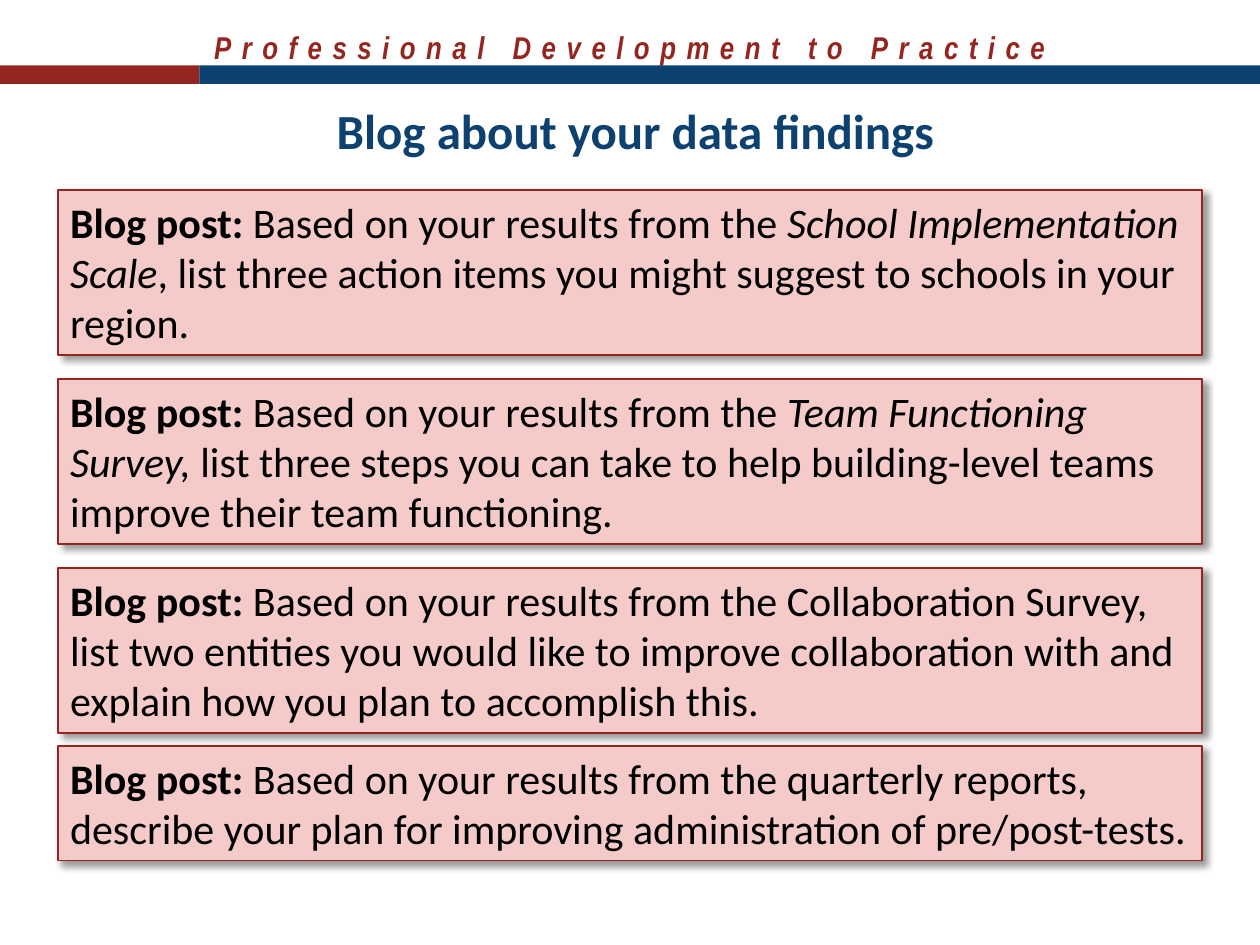
from lxml import etree
from pptx import Presentation
from pptx.dml.color import RGBColor
from pptx.enum.shapes import MSO_SHAPE
from pptx.enum.text import MSO_ANCHOR, PP_ALIGN
from pptx.oxml import parse_xml
from pptx.oxml.ns import nsdecls
from pptx.util import Pt

RED, BLUE, PINK, BLACK = "95261F", "0D4170", "F4CBC8", "000000"
SHADOW = (
    f'<a:effectLst {nsdecls("a")}>'
    '<a:outerShdw blurRad="50800" dist="38100" dir="2700000" algn="tl" rotWithShape="0">'
    '<a:srgbClr val="000000"><a:alpha val="40000"/></a:srgbClr>'
    '</a:outerShdw></a:effectLst>'
)


def color(value):
    return RGBColor.from_string(value)


def add_rectangle(left, top, width, height, fill):
    shape = slide.shapes.add_shape(
        MSO_SHAPE.RECTANGLE, Pt(left), Pt(top), Pt(width), Pt(height))
    shape.fill.solid()
    shape.fill.fore_color.rgb = color(fill)
    shape.line.fill.background()
    return shape


presentation = Presentation()
presentation.slide_width, presentation.slide_height = Pt(720), Pt(540)
slide = presentation.slides.add_slide(presentation.slide_layouts[6])

# Header and title: text, left, top, width, height, font, size, colour, italic, spacing
headings = [
    ("Professional Development to Practice", 0, 12.24, 720, 28.8,
     "Arial Narrow", 18, RED, True, 6),
    ("Blog about your data findings", 24, 54, 678, 42,
     "Calibri", 28, BLUE, False, 0),
]
for text, left, top, width, height, font_name, size, text_color, italic, spacing in headings:
    text_box = slide.shapes.add_textbox(Pt(left), Pt(top), Pt(width), Pt(height))
    text_box.text_frame.word_wrap = True
    paragraph = text_box.text_frame.paragraphs[0]
    paragraph.alignment = PP_ALIGN.CENTER
    paragraph.font.name = font_name
    paragraph.font.size = Pt(size)
    paragraph.font.bold = True
    paragraph.font.italic = italic
    paragraph.font.color.rgb = color(text_color)
    run = paragraph.add_run()
    run.text = text
    if spacing:
        run._r.get_or_add_rPr().set("spc", str(spacing * 100))

# Two-colour band under the header
for left, width, fill in [(0, 114, RED), (114, 606, BLUE)]:
    band = add_rectangle(left, 37.3, width, 10.7, fill)
    band.shadow.inherit = False

# Blog post cards: top, height, text before the survey name, survey name, text after it
posts = [
    (108.5, 94.5, "Based on your results from the ", "School Implementation Scale",
     ", list three action items you might suggest to schools in your region."),
    (216.5, 94.5, "Based on your results from the ", "Team Functioning Survey, ",
     "list three steps you can take to help building-level teams "
     "improve their team functioning."),
    (324.5, 94.5, "Based on your results from the Collaboration Survey, list two entities "
     "you would like to improve collaboration with and explain how you plan "
     "to accomplish this.", "", ""),
    (426.3, 65.5, "Based on your results from the quarterly reports, describe your plan "
     "for improving administration of pre/post-tests.", "", ""),
]
for top, height, opening, survey, ending in posts:
    card = add_rectangle(33, top, 654, height, PINK)
    card.line.color.rgb = color(RED)
    card.line.width = Pt(1)
    card._element.spPr.append(parse_xml(SHADOW))
    card.text_frame.word_wrap = True
    card.text_frame.vertical_anchor = MSO_ANCHOR.TOP
    paragraph = card.text_frame.paragraphs[0]
    paragraph.alignment = PP_ALIGN.LEFT
    paragraph.font.name = "Calibri"
    paragraph.font.size = Pt(24)
    paragraph.font.color.rgb = color(BLACK)
    for text, bold, italic in [("Blog post: ", True, False), (opening, False, False),
                               (survey, False, True), (ending, False, False)]:
        if text:
            run = paragraph.add_run()
            run.text = text
            run.font.bold = bold
            run.font.italic = italic

presentation.save("out.pptx")
